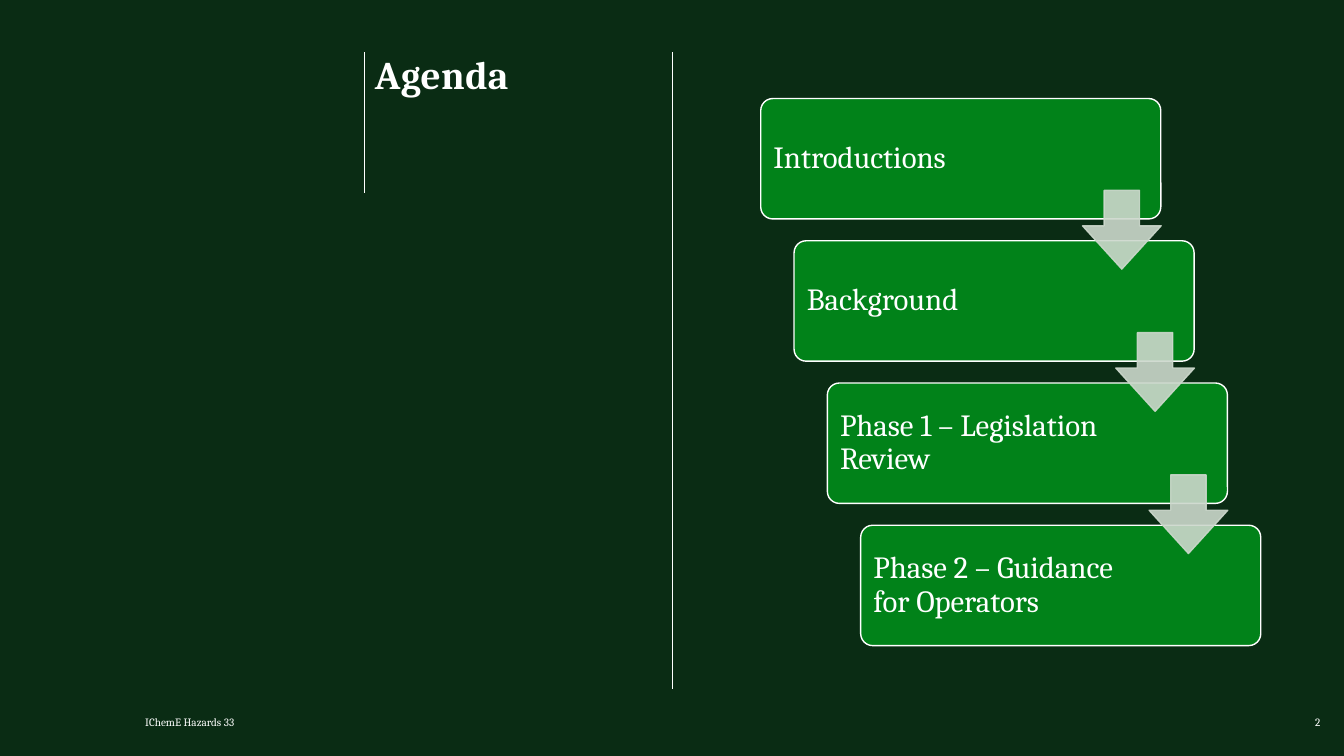
from dataclasses import dataclass

from lxml import etree
from pptx import Presentation
from pptx.dml.color import RGBColor
from pptx.enum.shapes import MSO_CONNECTOR, MSO_SHAPE
from pptx.enum.text import MSO_ANCHOR, PP_ALIGN
from pptx.oxml.ns import qn
from pptx.util import Pt

LINE = MSO_CONNECTOR.STRAIGHT
ROUND, DOWN = MSO_SHAPE.ROUNDED_RECTANGLE, MSO_SHAPE.DOWN_ARROW
TOP, MIDDLE, BOTTOM = MSO_ANCHOR.TOP, MSO_ANCHOR.MIDDLE, MSO_ANCHOR.BOTTOM
LEFT, RIGHT = PP_ALIGN.LEFT, PP_ALIGN.RIGHT

FONT = "Cambria"
COLORS = {"back": "0A2C14", "text": "FFFFFF", "step": "018219", "arrow": "CCD8CC"}

STEPS = ["Introductions", "Background", "Phase 1 – Legislation Review",
         "Phase 2 – Guidance for Operators"]
STEP_X, STEP_Y = 23.8, 101.6
ARROW_X, ARROW_Y, ARROW_SIZE = 229.8, 65.6, 56.2


@dataclass(frozen=True)
class Box:
    left: float
    top: float
    width: float
    height: float

    def move(self, x: float, y: float) -> "Box":
        return Box(self.left + x, self.top + y, self.width, self.height)

    def points(self) -> tuple:
        return Pt(self.left), Pt(self.top), Pt(self.width), Pt(self.height)


@dataclass(frozen=True)
class Rule:
    x: float
    top: float
    end: float


RULES = [Rule(260, 37.4, 138.2), Rule(480.2, 37.4, 492.5)]
CARD = Box(543.4, 70.4, 285.8, 86)
LABEL = Box(545.9, 72.9, 201.2, 81)


def color(name: str) -> RGBColor:
    return RGBColor.from_string(COLORS[name])


def add_rule(slide, rule: Rule) -> None:
    line = slide.shapes.add_connector(LINE, Pt(rule.x), Pt(rule.top), Pt(rule.x), Pt(rule.end))
    line.line.color.rgb = color("text")
    line.line.width = Pt(0.5)
    etree.SubElement(line._element.spPr, qn("a:effectLst"))


def add_text(slide, text: str, box: Box, *, size: float, bold: bool = False,
             align: PP_ALIGN = LEFT, anchor: MSO_ANCHOR = TOP, inset: float = 0,
             leading: float = 1, after: float = 0, track: int = 0) -> None:
    """Add a wrapped text box; track is letter spacing in hundredths of a point."""
    frame = slide.shapes.add_textbox(*box.points()).text_frame
    frame.word_wrap = True
    frame.vertical_anchor = anchor
    frame.margin_left = frame.margin_right = Pt(inset)
    frame.margin_top = frame.margin_bottom = Pt(inset)
    para = frame.paragraphs[0]
    para.alignment = align
    para.line_spacing = leading
    para.space_after = Pt(after)
    run = para.add_run()
    run.text = text
    run.font.name = FONT
    run.font.size = Pt(size)
    run.font.bold = bold
    run.font.color.rgb = color("text")
    if track:
        run.font._element.set("spc", str(track))


def add_shape(slide, kind: MSO_SHAPE, box: Box, fill: str, edge: str,
              adjust: tuple[float, ...], alpha: int = 100) -> None:
    shape = slide.shapes.add_shape(kind, *box.points())
    shape.shadow.inherit = False
    for i, value in enumerate(adjust):
        shape.adjustments[i] = value
    shape.fill.solid()
    shape.fill.fore_color.rgb = color(fill)
    shape.line.color.rgb = color(edge)
    shape.line.width = Pt(1)
    if alpha < 100:
        for tone in shape._element.spPr.iter(qn("a:srgbClr")):
            etree.SubElement(tone, qn("a:alpha"), val=str(alpha * 1000))


def add_steps(slide) -> None:
    for i, text in enumerate(STEPS):
        x, y = i * STEP_X, i * STEP_Y
        add_shape(slide, ROUND, CARD.move(x, y), "step", "text", (0.1,))
        add_text(slide, text, LABEL.move(x, y), size=22, anchor=MIDDLE,
                 inset=6.6, leading=0.9, after=7.7)
    first = Box(CARD.left + ARROW_X, CARD.top + ARROW_Y, ARROW_SIZE, ARROW_SIZE)
    for i in range(len(STEPS) - 1):
        add_shape(slide, DOWN, first.move(i * STEP_X, i * STEP_Y),
                  "arrow", "arrow", (0.45, 0.55), alpha=90)


def main() -> None:
    deck = Presentation()
    deck.slide_width, deck.slide_height = Pt(960), Pt(540)
    slide = deck.slides.add_slide(deck.slide_layouts[6])
    slide.background.fill.solid()
    slide.background.fill.fore_color.rgb = color("back")
    for rule in RULES:
        add_rule(slide, rule)
    add_text(slide, "IChemE Hazards 33", Box(103.7, 506.2, 368.6, 14.4), size=8, anchor=BOTTOM)
    add_text(slide, "2", Box(900.7, 506.2, 42.5, 14.4), size=8, align=RIGHT, anchor=BOTTOM)
    add_text(slide, "Agenda", Box(267.8, 39.6, 188.6, 30.2), size=28, bold=True,
             leading=0.9, track=30)
    add_steps(slide)
    deck.save("out.pptx")


if __name__ == "__main__":
    main()
